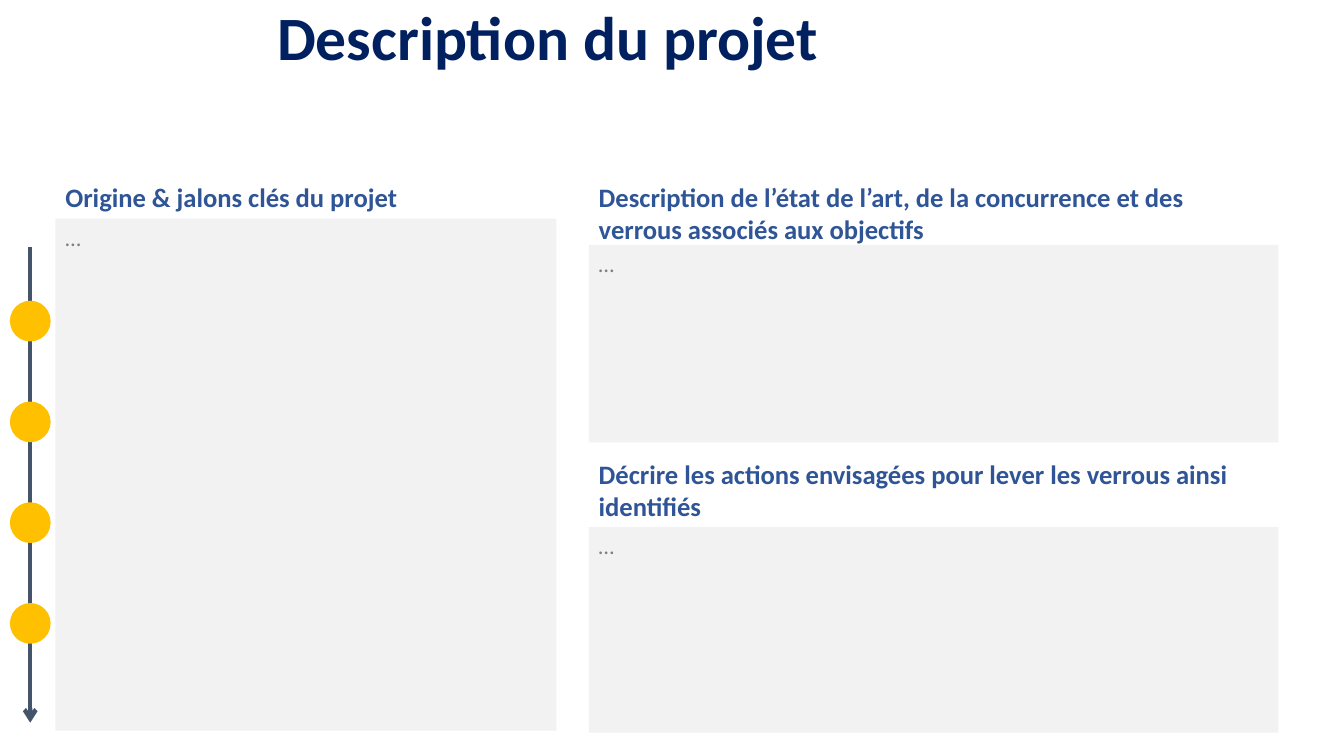
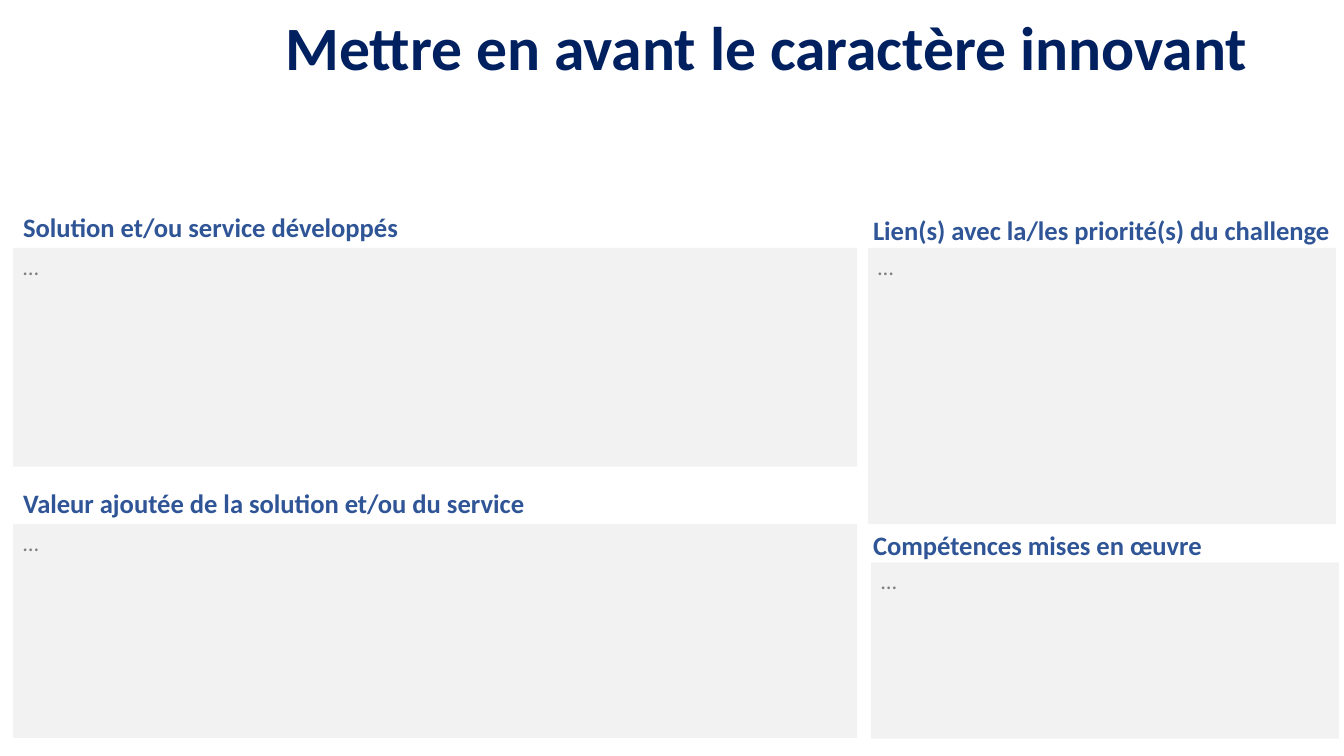
from lxml import etree
from pptx import Presentation, util as u
from pptx.dml.color import RGBColor
from pptx.enum import shapes, text
from pptx.oxml.ns import qn

NAVY = RGBColor(0x00, 0x20, 0x60)
BLUE = RGBColor(0x2F, 0x55, 0x97)
SLATE = RGBColor(0x44, 0x54, 0x6A)
GOLD = RGBColor(0xFF, 0xC0, 0x00)
GREY = RGBColor(0x80, 0x80, 0x80)
PALE = RGBColor(0xF2, 0xF2, 0xF2)
FONT = "Calibri"

deck = Presentation()
deck.slide_width = u.Inches(13.33)
deck.slide_height = u.Inches(7.5)

# The grid has 100 columns and 100 rows
COLUMN = deck.slide_width / 100
ROW = deck.slide_height / 100
ONE_LINE, TWO_LINES = 5.6, 9.87  # heading heights, in rows


def place(left, top, width, height):
    """Turn columns and rows of the grid into slide lengths."""
    return (round(left * COLUMN), round(top * ROW),
            round(width * COLUMN), round(height * ROW))


def write(box, words, size, color, bold=False):
    """Write one wrapped paragraph from the top of the box and return it."""
    frame = box.text_frame
    frame.word_wrap = True
    frame.vertical_anchor = text.MSO_ANCHOR.TOP
    para = frame.paragraphs[0]
    span = para.add_run()
    span.text = words
    span.font.name = FONT
    span.font.size = u.Pt(size)
    span.font.bold = bold
    span.font.color.rgb = color
    return para


# Each slide: title, title area, then panels as (heading, heading area, panel area)
pages = [
    ("Description du projet", (19.88, 0, 71.49, 10.67), [
        ("Origine & jalons clés du projet",
         (4.13, 23.33, 37.28, ONE_LINE), (4.13, 28.93, 37.28, 67.73)),
        ("Description de l’état de l’art, de la concurrence et des verrous "
         "associés aux objectifs",
         (43.81, 23.33, 51.31, TWO_LINES), (43.81, 32.4, 51.31, 26.13)),
        ("Décrire les actions envisagées pour lever les verrous ainsi identifiés",
         (43.81, 59.87, 51.31, TWO_LINES), (43.81, 69.73, 51.31, 27.2)),
    ]),
    ("Mettre en avant le caractère innovant", (20.48, 1.07, 79.5, 11.33), [
        ("Solution et/ou service développés",
         (0.98, 27.2, 45.61, ONE_LINE), (0.98, 32.8, 62.79, 28.93)),
        ("Valeur ajoutée de la solution et/ou du service",
         (0.98, 63.73, 47.94, ONE_LINE), (0.98, 69.33, 62.79, 28.27)),
        ("Lien(s) avec la/les priorité(s) du challenge",
         (64.22, 27.6, 35.78, ONE_LINE), (64.59, 32.8, 34.81, 36.53)),
        ("Compétences mises en œuvre",
         (64.22, 69.33, 35.78, ONE_LINE), (64.82, 74.4, 34.81, 23.33)),
    ]),
]

for title, title_area, panels in pages:
    page = deck.slides.add_slide(deck.slide_layouts[6])

    for heading, heading_area, panel_area in panels:
        panel = page.shapes.add_shape(shapes.MSO_SHAPE.RECTANGLE, *place(*panel_area))
        panel.shadow.inherit = False
        panel.fill.solid()
        panel.fill.fore_color.rgb = PALE
        panel.line.fill.background()
        write(panel, "…", 16, GREY).alignment = text.PP_ALIGN.JUSTIFY

        box = page.shapes.add_textbox(*place(*heading_area))
        write(box, heading, 19, BLUE, bold=True)
        box.text_frame.auto_size = text.MSO_AUTO_SIZE.SHAPE_TO_FIT_TEXT

    box = page.shapes.add_textbox(*place(*title_area))
    write(box, title, 44, NAVY, bold=True).line_spacing = 0.9
    box.text_frame.vertical_anchor = text.MSO_ANCHOR.MIDDLE

# Timeline of milestones on the first slide
page = deck.slides[0]
axis, start, _, end = place(2.25, 32.67, 0, 95.6)
timeline = page.shapes.add_connector(shapes.MSO_CONNECTOR.STRAIGHT, axis, start, axis, end)
timeline.line.color.rgb = SLATE
timeline.line.width = u.Pt(3)
etree.SubElement(timeline.line._get_or_add_ln(), qn("a:tailEnd"), type="arrow")
etree.SubElement(timeline._element.spPr, qn("a:effectLst"))

diameter = round(5.2 * ROW)
for step in range(4):
    middle = round((42.47 + step * 13.33) * ROW)
    milestone = page.shapes.add_shape(
        shapes.MSO_SHAPE.OVAL, axis - diameter // 2, middle - diameter // 2,
        diameter, diameter)
    milestone.shadow.inherit = False
    milestone.fill.solid()
    milestone.fill.fore_color.rgb = GOLD
    milestone.line.color.rgb = GOLD
    milestone.line.width = u.Pt(1)

deck.save("out.pptx")
